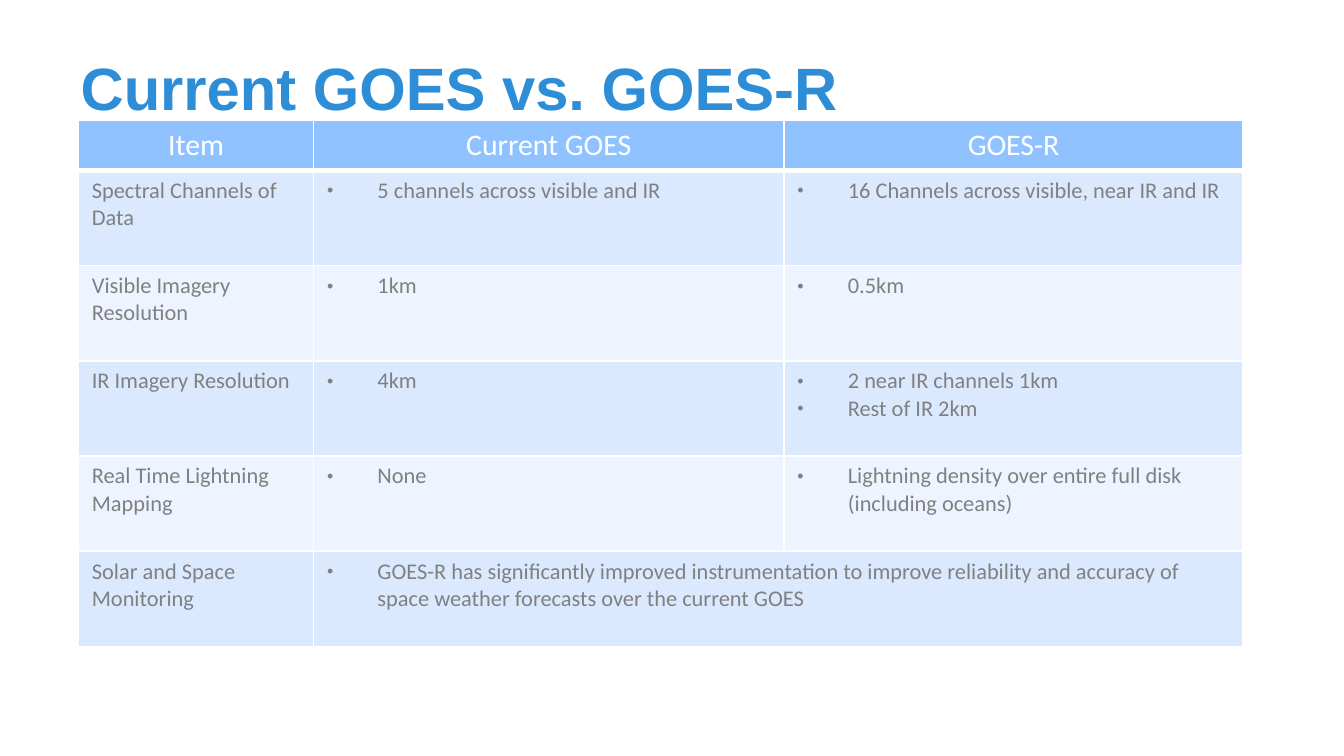
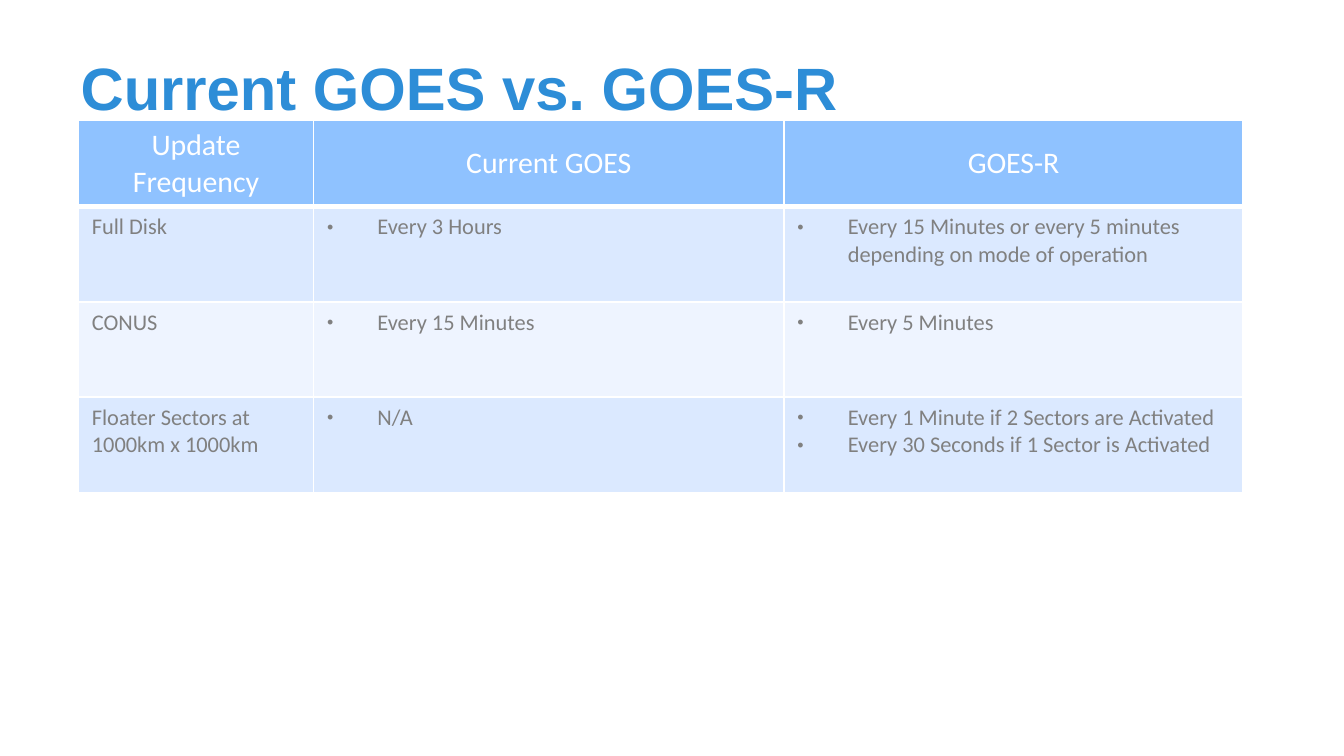
"""Build two slides comparing the current GOES satellites with GOES-R."""
from lxml import etree
from pptx import Presentation, util as u
from pptx.dml.color import RGBColor
from pptx.enum import text
from pptx.oxml.ns import qn

PX = 9525
TITLE_BLUE = RGBColor(0x2D, 0x8D, 0xD7)
HEADER_BLUE = RGBColor(0x8F, 0xC2, 0xFF)
BAND_BLUES = [RGBColor(0xEE, 0xF4, 0xFF), RGBColor(0xDB, 0xE9, 0xFF)]
GREY = RGBColor(0x80, 0x80, 0x80)
WHITE = RGBColor(0xFF, 0xFF, 0xFF)
TITLE = "Current GOES vs. GOES-R"
COLUMN_WIDTHS = [168, 336, 328]
HEADER_HEIGHT, ROW_HEIGHT = 23, 68
INDENT = 36

CAPABILITIES = [
    ["Item", "Current GOES", "GOES-R"],
    ["Spectral Channels of Data", "5 channels across visible and IR",
     "16 Channels across visible, near IR and IR"],
    ["Visible Imagery Resolution", "1km", "0.5km"],
    ["IR Imagery Resolution", "4km", "2 near IR channels 1km\nRest of IR 2km"],
    ["Real Time Lightning Mapping", "None",
     "Lightning density over entire full disk (including oceans)"],
    ["Solar and Space Monitoring",
     "GOES-R has significantly improved instrumentation to improve reliability "
     "and accuracy of space weather forecasts over the current GOES"],
]
UPDATES = [
    ["Update Frequency", "Current GOES", "GOES-R"],
    ["Full Disk", "Every 3 Hours",
     "Every 15 Minutes or every 5 minutes depending on mode of operation"],
    ["CONUS", "Every 15 Minutes", "Every 5 Minutes"],
    ["Floater Sectors at 1000km x 1000km", "N/A",
     "Every 1 Minute if 2 Sectors are Activated\n"
     "Every 30 Seconds if 1 Sector is Activated"],
]


def add_run(paragraph, words, font_name, size, color, bold=False):
    run = paragraph.add_run()
    run.text = words
    run.font.name = font_name
    run.font.size = u.Pt(size)
    run.font.bold = bold
    run.font.color.rgb = color


def style_cell(cell, fill_color, bottom_width):
    properties = cell._tc.get_or_add_tcPr()
    for side, width in (("L", 1), ("R", 1), ("T", 1), ("B", bottom_width)):
        line = etree.SubElement(properties, qn(f"a:ln{side}"), w=str(u.Pt(width)))
        fill = etree.SubElement(line, qn("a:solidFill"))
        etree.SubElement(fill, qn("a:srgbClr"), val=str(WHITE))
    cell.fill.solid()
    cell.fill.fore_color.rgb = fill_color


presentation = Presentation()
presentation.slide_width = 960 * PX
presentation.slide_height = 540 * PX

for rows in (CAPABILITIES, UPDATES):
    slide = presentation.slides.add_slide(presentation.slide_layouts[5])
    title = slide.shapes.title
    title.left, title.top, title.width, title.height = (
        48 * PX, 30 * PX, 864 * PX, 64 * PX)
    title.text_frame.auto_size = text.MSO_AUTO_SIZE.NONE
    title.text_frame.vertical_anchor = text.MSO_ANCHOR.MIDDLE
    paragraph = title.text_frame.paragraphs[0]
    paragraph.alignment = text.PP_ALIGN.LEFT
    add_run(paragraph, TITLE, "Arial", 32, TITLE_BLUE, bold=True)

    table_height = HEADER_HEIGHT + ROW_HEIGHT * (len(rows) - 1)
    table = slide.shapes.add_table(
        len(rows), len(COLUMN_WIDTHS), 56 * PX, 86 * PX,
        sum(COLUMN_WIDTHS) * PX, table_height * PX).table
    table.first_row = False
    table.horz_banding = False
    for column, width in zip(table.columns, COLUMN_WIDTHS):
        column.width = width * PX

    for row_index, entries in enumerate(rows):
        is_header = row_index == 0
        table.rows[row_index].height = (HEADER_HEIGHT if is_header else ROW_HEIGHT) * PX
        fill_color = HEADER_BLUE if is_header else BAND_BLUES[row_index % 2]
        for cell in table.rows[row_index].cells:
            style_cell(cell, fill_color, 3 if is_header else 1)
        if len(entries) < len(COLUMN_WIDTHS):
            table.cell(row_index, 1).merge(table.cell(row_index, 2))

        for column_index, entry in enumerate(entries):
            cell = table.cell(row_index, column_index)
            if is_header:
                cell.vertical_anchor = text.MSO_ANCHOR.MIDDLE
            for line_index, words in enumerate(entry.split("\n")):
                frame = cell.text_frame
                paragraph = frame.add_paragraph() if line_index else frame.paragraphs[0]
                if is_header:
                    paragraph.alignment = text.PP_ALIGN.CENTER
                    add_run(paragraph, words, "Calibri", 16, WHITE)
                    continue
                if column_index:
                    properties = paragraph._p.get_or_add_pPr()
                    properties.set("marL", str(INDENT * PX))
                    properties.set("indent", str(-INDENT * PX))
                    etree.SubElement(properties, qn("a:buSzPct"), val="80000")
                    etree.SubElement(properties, qn("a:buFont"), typeface="Arial")
                    etree.SubElement(properties, qn("a:buChar"), char="•")
                add_run(paragraph, words, "Calibri", 12, GREY)

presentation.save("out.pptx")
